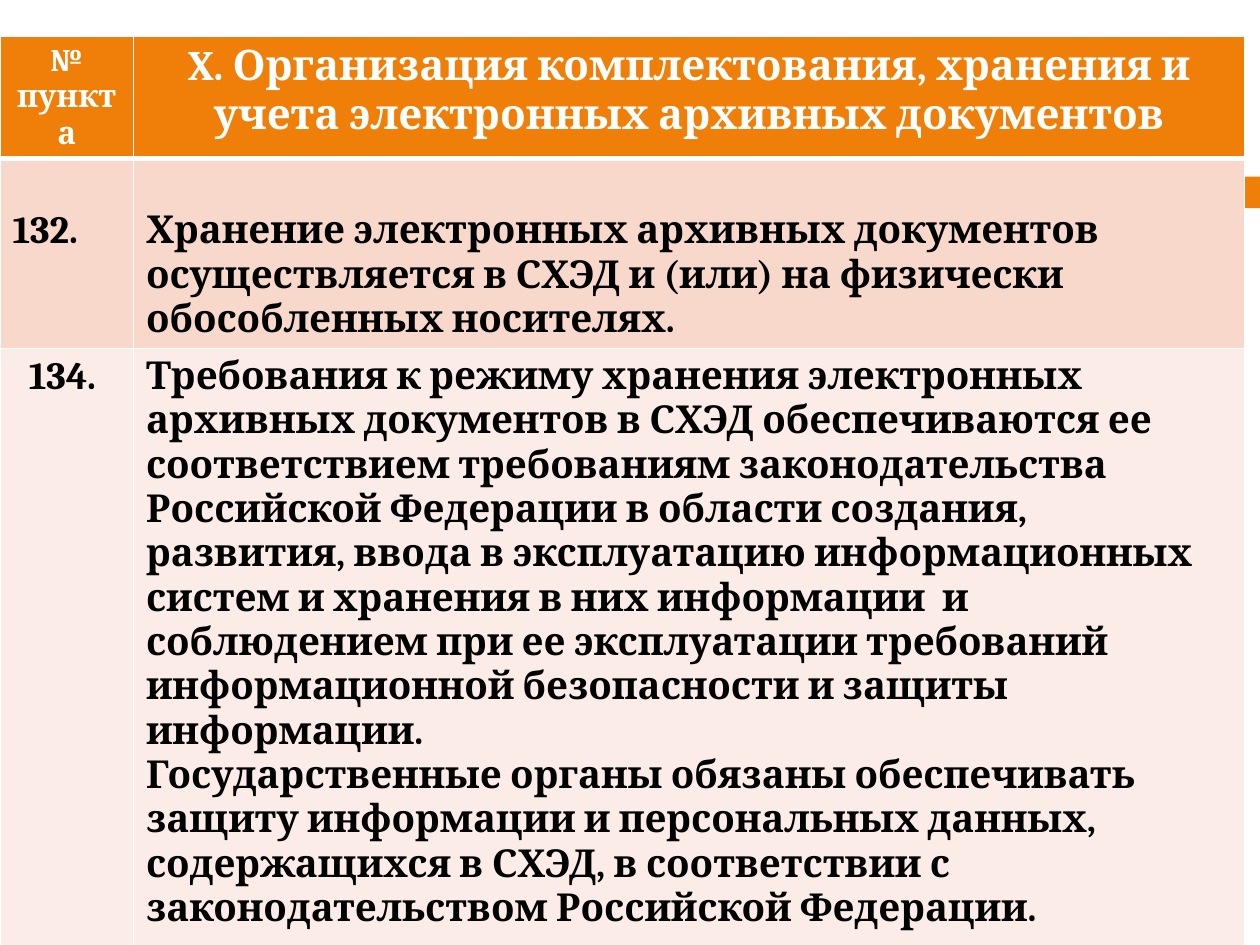
"""Build the slide on keeping electronic archive documents."""
from lxml.etree import SubElement
from pptx import Presentation
from pptx.dml.color import RGBColor
from pptx.enum.shapes import MSO_SHAPE
from pptx.enum.text import PP_ALIGN
from pptx.oxml.ns import qn
from pptx.util import Cm, Pt

THEME = {
    "font": "Cambria",
    "orange": "F07F09", "red": "9F2936", "white": "FFFFFF", "black": "000000",
    "band": "F9D8CC", "pale": "FCECE7",
    "number": 18, "title": 24, "body": 22,
}
HEADER = ("№ пункта", "X. Организация комплектования, хранения и учета электронных архивных документов")
CLAUSES = [
    ("132.", ["Хранение электронных архивных документов осуществляется в СХЭД и (или) "
              "на физически обособленных носителях."]),
    ("134. ", ["Требования к режиму хранения электронных архивных документов в СХЭД обеспечиваются "
               "ее соответствием требованиям законодательства Российской Федерации в области создания, "
               "развития, ввода в эксплуатацию информационных систем и хранения в них информации  и "
               "соблюдением при ее эксплуатации требований информационной безопасности и защиты информации.",
               "Государственные органы обязаны обеспечивать защиту информации и персональных данных, "
               "содержащихся в СХЭД, в соответствии с законодательством Российской Федерации."]),
]
BARS = [(0, 1.47, "red"), (1.65, 23.75, "orange")]
BAR_TOP, BAR_HEIGHT = 3.56, 0.64
TABLE_TOP = 0.74
COLS = (2.69, 22.4)
ROWS = (2.41, 3.83, 12.04)
FIRST_CLAUSE_MARGIN = 1.02


def color(name):
    return RGBColor.from_string(THEME[name])


def write(tf, paragraphs, size="body", ink="black", align=PP_ALIGN.LEFT):
    for i, text in enumerate(paragraphs):
        p = tf.add_paragraph() if i else tf.paragraphs[0]
        p.alignment = align
        r = p.add_run()
        r.text = text
        r.font.name = THEME["font"]
        r.font.size = Pt(THEME[size])
        r.font.bold = True
        r.font.color.rgb = color(ink)


def style_cell(cell, fill, top=1, bottom=1):
    cell.fill.solid()
    cell.fill.fore_color.rgb = color(fill)
    tc_pr = cell._tc.get_or_add_tcPr()
    for i, (side, width) in enumerate(zip("LRTB", (1, 1, top, bottom))):
        ln = SubElement(tc_pr, qn(f"a:ln{side}"), w=str(Pt(width)))
        SubElement(SubElement(ln, qn("a:solidFill")), qn("a:srgbClr"), val=THEME["white"])
        tc_pr.insert(i, ln)


def add_bars(s):
    for left, width, fill in BARS:
        sp = s.shapes.add_shape(MSO_SHAPE.RECTANGLE, Cm(left), Cm(BAR_TOP), Cm(width), Cm(BAR_HEIGHT))
        sp.shadow.inherit = False
        sp.fill.solid()
        sp.fill.fore_color.rgb = color(fill)
        sp.line.fill.background()


def add_clauses(s):
    table = s.shapes.add_table(len(ROWS), len(COLS), 0, Cm(TABLE_TOP), Cm(sum(COLS)), Cm(sum(ROWS))).table
    for col, width in zip(table.columns, COLS):
        col.width = Cm(width)
    for row, height in zip(table.rows, ROWS):
        row.height = Cm(height)

    for col, (text, size) in enumerate(zip(HEADER, ("number", "title"))):
        cell = table.cell(0, col)
        style_cell(cell, "orange", bottom=3)
        write(cell.text_frame, [text], size=size, ink="white", align=PP_ALIGN.CENTER)

    looks = [("band", 3, PP_ALIGN.LEFT), ("pale", 1, PP_ALIGN.CENTER)]
    for row, ((number, body), (fill, top, align)) in enumerate(zip(CLAUSES, looks), 1):
        for col, paragraphs in enumerate(([number], body)):
            cell = table.cell(row, col)
            style_cell(cell, fill, top=top)
            write(cell.text_frame, paragraphs, align=PP_ALIGN.LEFT if col else align)
            if row == 1:
                cell.margin_top = Cm(FIRST_CLAUSE_MARGIN)


def main():
    prs = Presentation()
    prs.slide_width, prs.slide_height = Cm(25.4), Cm(19.05)
    s = prs.slides.add_slide(prs.slide_layouts[6])
    add_bars(s)
    add_clauses(s)
    prs.save("out.pptx")


if __name__ == "__main__":
    main()
